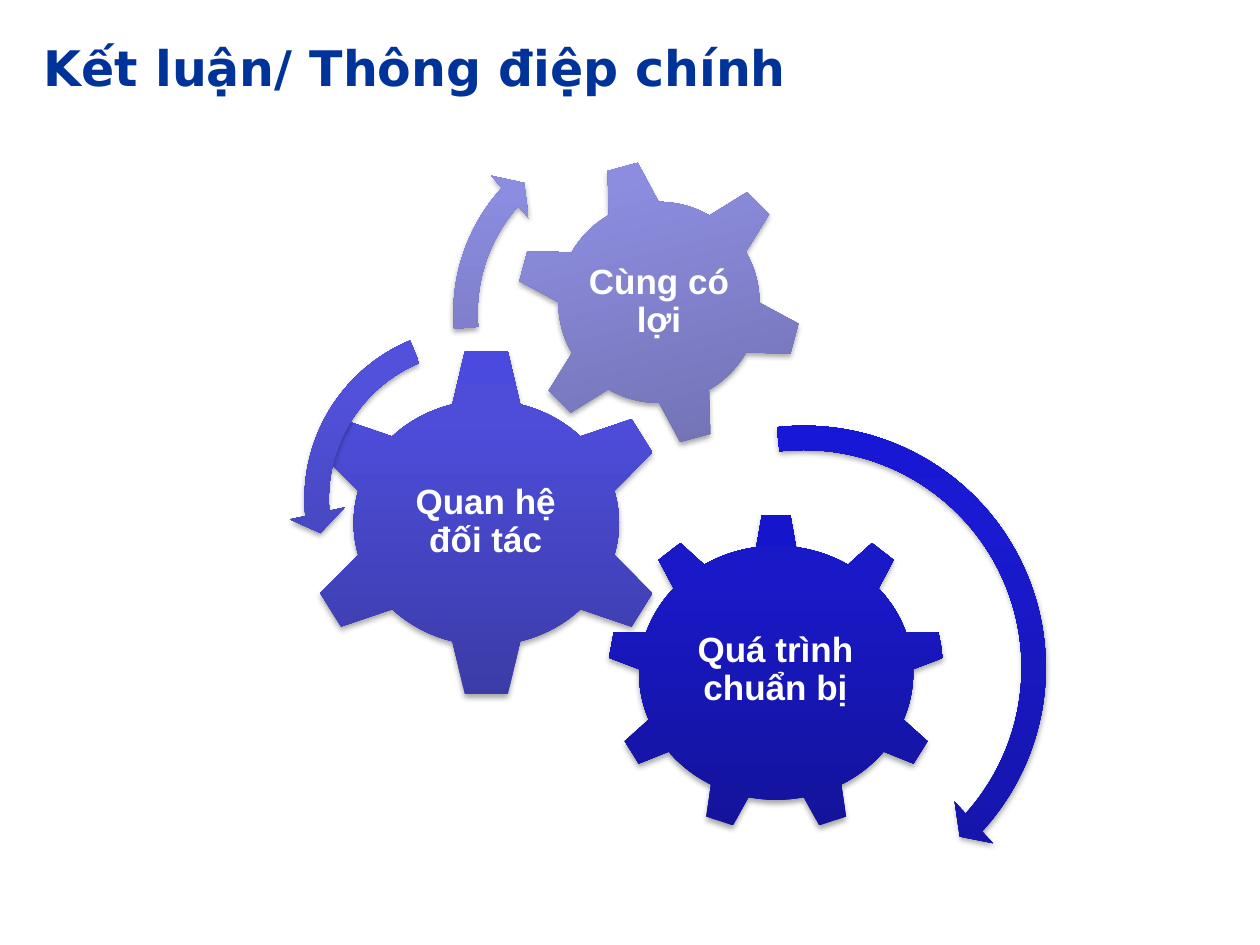
from copy import deepcopy

from lxml import etree
from pptx import Presentation
from pptx.dml.color import RGBColor
from pptx.enum.shapes import MSO_SHAPE
from pptx.enum.text import MSO_ANCHOR, PP_ALIGN
from pptx.oxml.ns import qn
from pptx.util import Inches, Pt

GEAR6, GEAR9 = MSO_SHAPE.GEAR_6, MSO_SHAPE.GEAR_9
RIGHT, LEFT = MSO_SHAPE.CIRCULAR_ARROW, MSO_SHAPE.LEFT_CIRCULAR_ARROW
TOP, MIDDLE = MSO_ANCHOR.TOP, MSO_ANCHOR.MIDDLE
START, CENTER = PP_ALIGN.LEFT, PP_ALIGN.CENTER

THEME = {
    "title": {"font": "DejaVu Sans", "size": 28, "color": "003399"},
    "label": {"font": "Arial", "size": 20, "color": "FFFFFF"},
    "stops": (0, 0.8, 1),
    "shadow": {"color": "000000", "alpha": 35, "blur": 3.15, "dist": 1.8},
}

TITLE = "Kết luận/ Thông điệp chính"
TITLE_BOX = (0.25, 0.25, 6.86, 0.85)

# Gradients run from the bottom of a shape to its top.
GEARS = [
    {"text": "Quá trình chuẩn bị", "kind": GEAR9, "box": (4.82, 4.08, 2.68, 2.52),
     "label": (5.34, 4.67, 1.63, 1.3), "turn": 0,
     "fill": ("13139A", "1919C8", "1515CC")},
    {"text": "Quan hệ đối tác", "kind": GEAR6, "box": (2.39, 2.76, 2.94, 2.78),
     "label": (3.11, 3.46, 1.49, 1.37), "turn": 0,
     "fill": ("3B3BA8", "4D4DDA", "4A4ADE")},
    {"text": "Cùng có lợi", "kind": GEAR6, "box": (4.09, 1.26, 2.28, 2.28),
     "label": (4.59, 1.76, 1.28, 1.28), "turn": 345,
     "fill": ("6D6DAC", "8D8DE0", "8C8CE2")},
]

ARROWS = [
    {"kind": RIGHT, "box": (4.33, 3.25, 4.1, 4.1),
     "bend": (0.047, 2.99, 25.378, 158.155, 0.055),
     "fill": ("1414A2", "1A1AD2", "1717D7")},
    {"kind": LEFT, "box": (2.29, 2.47, 2.98, 2.98),
     "bend": (0.065, 4.3, 104.891, 148.378, 0.075),
     "fill": ("3E3EA9", "5151DB", "4F4FDF")},
    {"kind": RIGHT, "box": (3.47, 0.88, 3.21, 3.21),
     "bend": (0.06, 3.941, 133.138, 105.082, 0.07),
     "fill": ("6C6CAC", "8C8CE0", "8B8BE2")},
]


def place(box):
    return [Inches(n) for n in box]


def add_text(shapes, text, box, style, align=START, anchor=TOP, inset=None,
             spacing=None):
    frame = shapes.add_textbox(*place(box)).text_frame
    frame.word_wrap = True
    frame.vertical_anchor = anchor
    if inset is not None:
        frame.margin_left = frame.margin_right = Inches(inset)
        frame.margin_top = frame.margin_bottom = Inches(inset)
    para = frame.paragraphs[0]
    para.alignment = align
    para.line_spacing = spacing
    run = para.add_run()
    run.text = text
    font = run.font
    font.name, font.size, font.bold = style["font"], Pt(style["size"]), True
    font.color.rgb = RGBColor.from_string(style["color"])


def shade(shape, colors):
    """Fill with a three-stop upward gradient."""
    fill = shape.fill
    fill.gradient()
    fill.gradient_angle = 90
    stops = shape.element.spPr.find(".//" + qn("a:gsLst"))
    stops.insert(1, deepcopy(stops[0]))
    for stop, spot, color in zip(fill.gradient_stops, THEME["stops"], colors):
        stop.position = spot
        stop.color.rgb = RGBColor.from_string(color)


def cast(shape):
    """Give the shape a soft shadow straight below it."""
    look = THEME["shadow"]
    shape.shadow.inherit = False
    effects = shape.element.spPr.find(qn("a:effectLst"))
    outer = etree.SubElement(
        effects, qn("a:outerShdw"), blurRad=str(Pt(look["blur"])),
        dist=str(Pt(look["dist"])), dir="5400000", rotWithShape="0")
    color = etree.SubElement(outer, qn("a:srgbClr"), val=look["color"])
    etree.SubElement(color, qn("a:alpha"), val=str(look["alpha"] * 1000))


def add_part(shapes, part):
    shape = shapes.add_shape(part["kind"], *place(part["box"]))
    shape.rotation = part.get("turn", 0)
    for i, value in enumerate(part.get("bend", ())):
        shape.adjustments[i] = value
    shade(shape, part["fill"])
    shape.line.fill.background()
    cast(shape)


def main():
    deck = Presentation()
    deck.slide_width, deck.slide_height = Inches(10), Inches(7.5)
    slide = deck.slides.add_slide(deck.slide_layouts[6])
    add_text(slide.shapes, TITLE, TITLE_BOX, THEME["title"])
    shapes = slide.shapes.add_group_shape().shapes
    for gear in GEARS:
        add_part(shapes, gear)
        add_text(shapes, gear["text"], gear["label"], THEME["label"],
                 align=CENTER, anchor=MIDDLE, inset=0.03, spacing=0.9)
    for arrow in ARROWS:
        add_part(shapes, arrow)
    deck.save("out.pptx")


if __name__ == "__main__":
    main()
